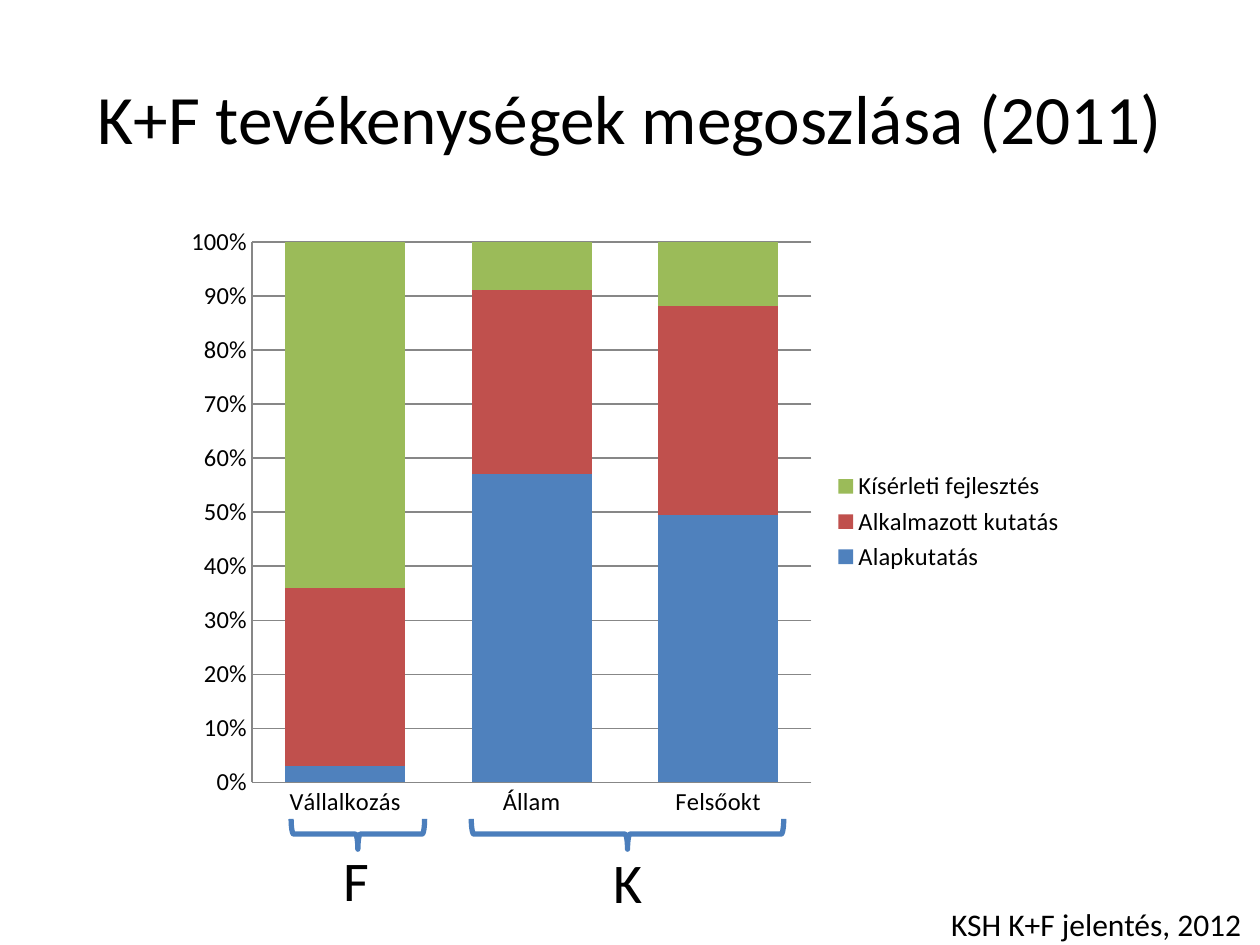
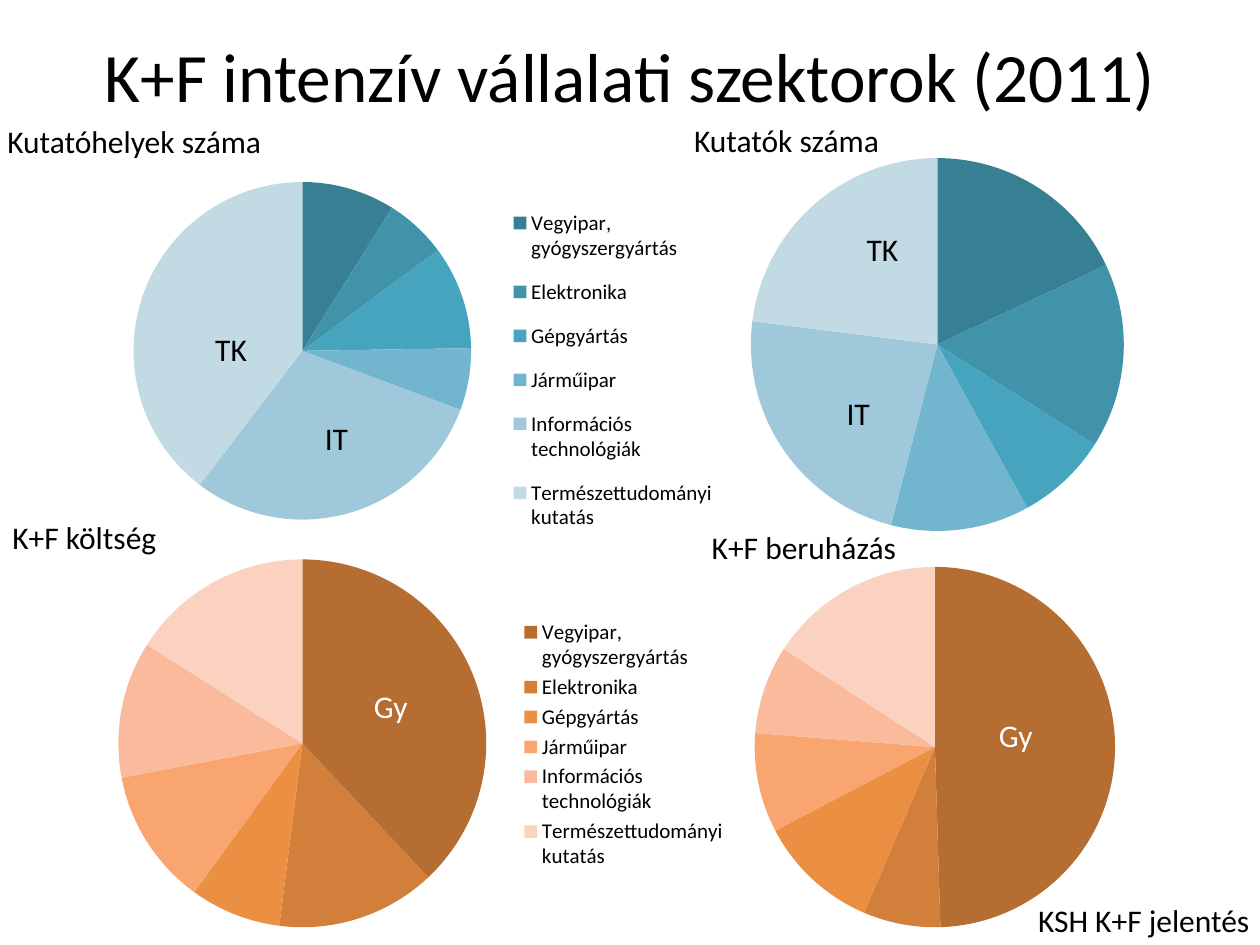
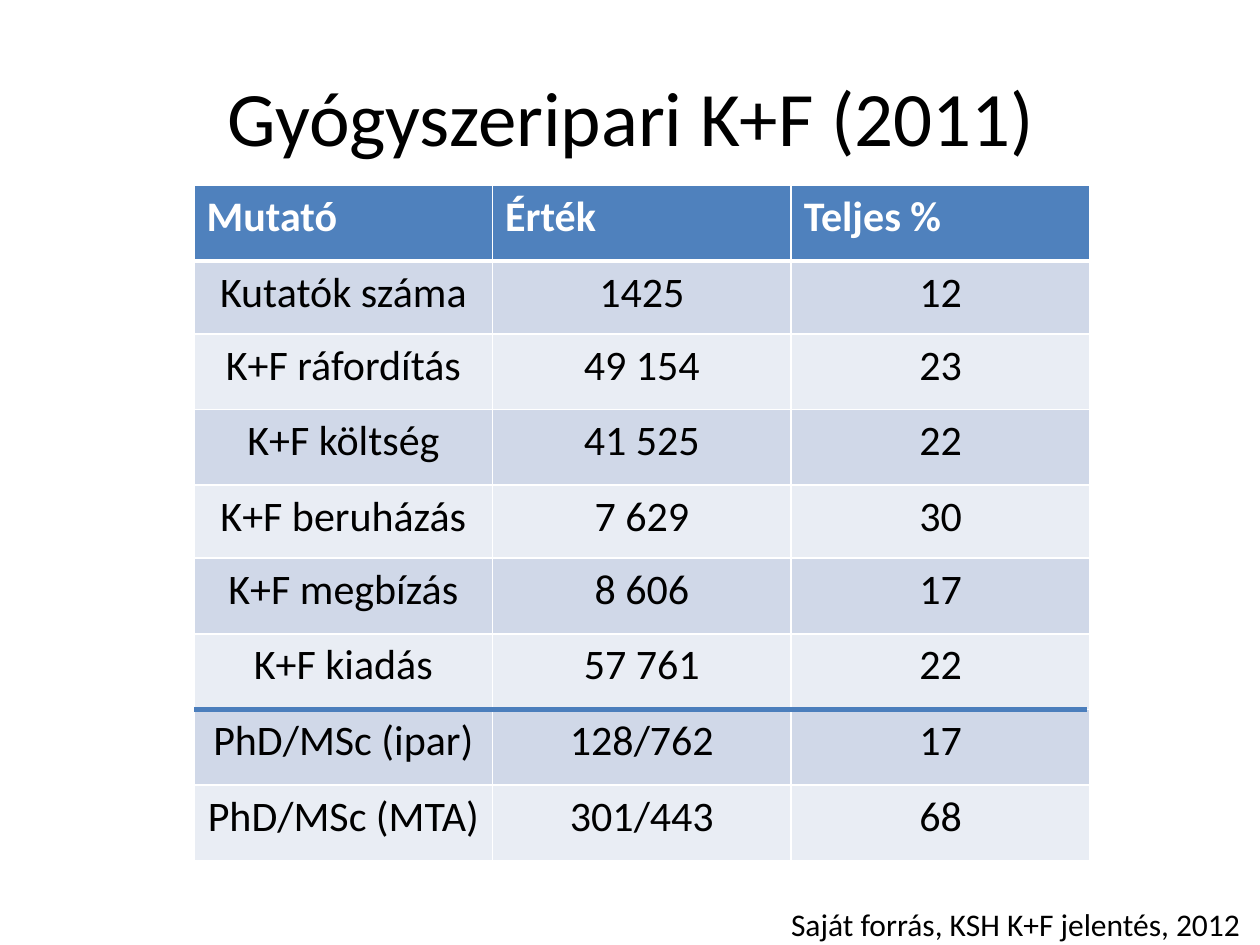
from lxml import etree
from pptx import Presentation
from pptx.chart.data import CategoryChartData
from pptx.dml.color import RGBColor
from pptx.enum.chart import XL_CHART_TYPE, XL_LEGEND_POSITION, XL_TICK_MARK
from pptx.enum.shapes import MSO_CONNECTOR, MSO_SHAPE
from pptx.enum.text import MSO_ANCHOR, MSO_AUTO_SIZE, PP_ALIGN
from pptx.oxml.ns import qn
from pptx.util import Inches, Pt

STACK = XL_CHART_TYPE.COLUMN_STACKED_100
PIE = XL_CHART_TYPE.PIE
RIGHT = XL_LEGEND_POSITION.RIGHT
NO_TICK = XL_TICK_MARK.NONE
BRACE = MSO_SHAPE.RIGHT_BRACE
STRAIGHT = MSO_CONNECTOR.STRAIGHT
MIDDLE = MSO_ANCHOR.MIDDLE
FIT = MSO_AUTO_SIZE.SHAPE_TO_FIT_TEXT
FIXED = MSO_AUTO_SIZE.NONE
CENTER, LEFT = PP_ALIGN.CENTER, PP_ALIGN.LEFT

FONT = "Calibri"
BLACK = RGBColor(0x00, 0x00, 0x00)
WHITE = RGBColor(0xFF, 0xFF, 0xFF)
BLUE = RGBColor(0x4F, 0x81, 0xBD)
RED = RGBColor(0xC0, 0x50, 0x4D)
GREEN = RGBColor(0x9B, 0xBB, 0x59)
RULE = RGBColor(0x4B, 0x7E, 0xBC)
GRAY = RGBColor(0x87, 0x87, 0x87)
BANDS = (RGBColor(0xD0, 0xD8, 0xE8), RGBColor(0xE9, 0xED, 0xF4))
TEALS = [RGBColor.from_string(c) for c in
         ("378093", "4193AA", "46A4BE", "72B5CE", "9FC8DA", "C2DAE4")]
RUSTS = [RGBColor.from_string(c) for c in
         ("B66D31", "D17F3A", "EB9043", "F8A570", "F9BB9C", "FBD2C0")]

SECTORS = ("Vegyipar, gyógyszergyártás", "Elektronika", "Gépgyártás",
           "Járműipar", "Információs technológiák",
           "Természettudományi kutatás")
SOURCE_TOP = 7.13

SHARES = (("Alapkutatás", (3, 57, 50), BLUE),
          ("Alkalmazott kutatás", (33, 34, 39), RED),
          ("Kísérleti fejlesztés", (64, 9, 12), GREEN))

PIES = (
    dict(box=(0.83, 1.12, 4.88, 3.33), mid=1.57, rad=1.34, shades=TEALS,
         vals=(9, 6, 10, 6, 30, 40), key=(3.19, 0.4, 1.69, 2.84),
         notes=(("Kutatóhelyek száma", -0.87, -0.2, 2.24, BLACK),
                ("TK", 0.78, 1.45, 0.46, BLACK),
                ("IT", 1.65, 2.16, 0.39, BLACK))),
    dict(box=(4.88, 1.12, 5.12, 3.23), mid=2.56, rad=1.48, shades=TEALS,
         vals=(18, 16, 8, 12, 23, 23), key=None,
         notes=(("Kutatók száma", 0.53, -0.21, 1.68, BLACK),
                ("IT", 1.74, 1.96, 0.39, BLACK),
                ("TK", 1.9, 0.66, 0.46, BLACK))),
    dict(box=(0.75, 4.3, 5.09, 3.2), mid=1.65, rad=1.46, shades=RUSTS,
         vals=(38, 14, 8, 12, 12, 16), key=(3.34, 0.58, 1.72, 2.06),
         notes=(("K+F költség", -0.75, -0.24, 1.36, BLACK),
                ("Gy", 2.12, 1.1, 0.47, WHITE))),
    dict(box=(4.84, 4.36, 5.16, 3.14), mid=2.58, rad=1.43, shades=RUSTS,
         vals=(50, 7, 11, 9, 8, 16), key=None,
         notes=(("K+F beruházás", 0.71, -0.22, 1.68, BLACK),
                ("Gy", 2.99, 1.27, 0.47, WHITE))),
)

ROWS = (("Mutató", "Érték", "Teljes %"),
        ("Kutatók száma", "1425", "12"),
        ("K+F ráfordítás", "49 154", "23"),
        ("K+F költség", "41 525", "22"),
        ("K+F beruházás", "7 629", "30"),
        ("K+F megbízás", "8 606", "17"),
        ("K+F kiadás", "57 761", "22"),
        ("PhD/MSc (ipar)", "128/762", "17"),
        ("PhD/MSc (MTA)", "301/443", "68"))
HEIGHTS = (0.6, 0.58, 0.6, 0.6, 0.58, 0.6, 0.6, 0.6, 0.6)


def inches(box):
    """Turn a box of numbers into lengths."""
    return [Inches(n) for n in box]


def style(font, size, color=BLACK, bold=False):
    """Set the shared typeface with a size, colour and weight."""
    font.name, font.size, font.bold = FONT, Pt(size), bold
    font.color.rgb = color


def start(deck, text, box, size):
    """Add a title-only slide and place its title."""
    slide = deck.slides.add_slide(deck.slide_layouts[5])
    title = slide.shapes.title
    title.left, title.top, title.width, title.height = inches(box)
    frame = title.text_frame
    frame.text = text
    frame.auto_size, frame.vertical_anchor = FIXED, MIDDLE
    par = frame.paragraphs[0]
    par.alignment = CENTER
    style(par.runs[0].font, size)
    return slide


def note(slide, text, box, size=18, color=BLACK, wrap=False):
    """Add a one-line text box."""
    frame = slide.shapes.add_textbox(*inches(box)).text_frame
    frame.text = text
    frame.word_wrap, frame.auto_size = wrap, FIT
    style(frame.paragraphs[0].runs[0].font, size, color)


def arrange(node, index, box, area):
    """Fix a chart part at an area measured in inches within the chart box."""
    for old in node.findall(qn("c:layout")):
        node.remove(old)
    layout = etree.Element(qn("c:layout"))
    manual = etree.SubElement(layout, qn("c:manualLayout"))
    pairs = [("xMode", "edge"), ("yMode", "edge")]
    if node.tag == qn("c:plotArea"):
        pairs.insert(0, ("layoutTarget", "inner"))
    for name, part, whole in zip("xywh", area, box[2:] * 2):
        pairs.append((name, f"{part / whole:.4f}"))
    for name, val in pairs:
        etree.SubElement(manual, qn("c:" + name)).set("val", val)
    node.insert(index, layout)


def add_chart(slide, kind, box, data, size, plot, legend):
    """Add a chart with the shared font, a fixed plot and a right legend."""
    chart = slide.shapes.add_chart(kind, *inches(box), data).chart
    chart.has_title = False
    style(chart.font, size)
    chart.has_legend = legend
    if legend:
        chart.legend.position = RIGHT
        chart.legend.include_in_layout = False
    area = chart._chartSpace.find(".//" + qn("c:plotArea"))
    arrange(area, 0, box, plot)
    return chart


def columns(slide, box):
    """Draw the stacked shares of research activities."""
    data = CategoryChartData()
    data.categories = ("Vállalkozás", "Állam", "Felsőokt")
    for name, vals, _ in SHARES:
        data.add_series(name, vals)
    chart = add_chart(slide, STACK, box, data, 14,
                      (0.62, 0.22, 4.44, 4.29), True)
    plot = chart.plots[0]
    plot.gap_width, plot.overlap = 55, 100
    plot.vary_by_categories = False
    for series, (_, _, color) in zip(plot.series, SHARES):
        series.format.fill.solid()
        series.format.fill.fore_color.rgb = color
    for axis in (chart.category_axis, chart.value_axis):
        axis.major_tick_mark = axis.minor_tick_mark = NO_TICK
        axis.format.line.color.rgb = GRAY
    axis = chart.value_axis
    axis.has_major_gridlines = True
    axis.major_gridlines.format.line.color.rgb = GRAY
    axis.major_unit = 0.1
    axis.tick_labels.number_format = "0%"
    axis.tick_labels.number_format_is_linked = False


def brace(slide, box, word, drop):
    """Draw a brace opening upwards with its word centred below."""
    left, top, width, height = box
    mid = left + width / 2
    shape = slide.shapes.add_shape(BRACE, *inches(
        (mid - height / 2, top + height / 2 - width / 2, height, width)))
    shape.rotation = 90
    shape.shadow.inherit = False
    shape.fill.background()
    shape.line.color.rgb, shape.line.width = RULE, Pt(3)
    note(slide, word, (mid - 0.21, top + drop, 0.42, 0.64), 32)


def pie(slide, box, mid, rad, shades, vals, key, notes):
    """Draw a pie of the sectors with its caption and marks."""
    data = CategoryChartData()
    data.categories = SECTORS if key else ("1", "2", "3", "4", "5", "6")
    data.add_series("Series 1", vals)
    plot = (mid - rad, box[3] / 2 - rad, 2 * rad, 2 * rad)
    chart = add_chart(slide, PIE, box, data, 12, plot, bool(key))
    if key:
        arrange(chart.legend._element, 1, box, key)
    chart.plots[0].vary_by_categories = True
    for index, shade in enumerate(shades):
        fill = chart.plots[0].series[0].points[index].format.fill
        fill.solid()
        fill.fore_color.rgb = shade


def marks(slide, box, notes):
    """Write the caption and marks of a pie relative to its box."""
    for text, x, y, width, color in notes:
        note(slide, text, (box[0] + x, box[1] + y, width, 0.4), color=color)


def edge(cell, index, side, width):
    """Give one side of a cell a white border."""
    line = etree.Element(qn("a:ln" + side), w=str(Pt(width)))
    fill = etree.SubElement(line, qn("a:solidFill"))
    etree.SubElement(fill, qn("a:srgbClr"), val=str(WHITE))
    cell._tc.get_or_add_tcPr().insert(index, line)


def grid(slide, box):
    """Build the table of indicators and the rule before its last rows."""
    left, top, width, _ = box
    table = slide.shapes.add_table(len(ROWS), 3, *inches(box)).table
    table.horz_banding = False
    for col in table.columns:
        col.width = Inches(width / 3)
    for r, row in enumerate(ROWS):
        table.rows[r].height = Inches(HEIGHTS[r])
        head = r == 0
        for c, text in enumerate(row):
            cell = table.cell(r, c)
            cell.text = text
            par = cell.text_frame.paragraphs[0]
            par.alignment = LEFT if head else CENTER
            style(par.runs[0].font, 24, WHITE if head else BLACK, head)
            cell.fill.solid()
            cell.fill.fore_color.rgb = BLUE if head else BANDS[(r - 1) % 2]
            thick = {"T": 3 if r == 1 else 1, "B": 3 if head else 1}
            for index, side in enumerate("LRTB"):
                edge(cell, index, side, thick.get(side, 1))
    y = top + sum(HEIGHTS[:7])
    line = slide.shapes.add_connector(
        STRAIGHT, *inches((left, y, left + width - 0.02, y)))
    line.line.color.rgb, line.line.width = RULE, Pt(3)
    etree.SubElement(line._element.spPr, qn("a:effectLst"))


def shares(deck):
    """Build the slide on the split of activities."""
    slide = start(deck, "K+F tevékenységek megoszlása (2011)",
                  (0.5, 0.3, 9, 1.25), 39.6)
    columns(slide, (1.38, 1.7, 7.17, 4.88))
    note(slide, "KSH K+F jelentés, 2012", (7.45, SOURCE_TOP, 2.59, 0.4))
    brace(slide, (3.74, 6.5, 2.48, 0.24), "K", 0.18)
    brace(slide, (2.31, 6.5, 1.06, 0.24), "F", 0.16)


def sectors(deck):
    """Build the slide with four pies."""
    slide = start(deck, "K+F intenzív vállalati szektorok (2011)",
                  (0.5, -0.03, 9, 1.25), 39.6)
    for item in PIES:
        pie(slide, **item)
    for item in PIES:
        marks(slide, item["box"], item["notes"])
    note(slide, "KSH K+F jelentés", (8.14, 7.1, 1.9, 0.4))


def pharma(deck):
    """Build the slide with the table."""
    slide = start(deck, "Gyógyszeripari K+F (2011)",
                  (0.51, 0.29, 9, 1.25), 44)
    grid(slide, (1.54, 1.47, 7.11, sum(HEIGHTS)))
    note(slide, "Saját forrás, KSH K+F jelentés, 2012",
         (6.18, SOURCE_TOP, 3.86, 0.4), wrap=True)


def main():
    """Build and save the deck."""
    deck = Presentation()
    deck.slide_width, deck.slide_height = Inches(10), Inches(7.5)
    shares(deck)
    sectors(deck)
    pharma(deck)
    deck.save("out.pptx")


if __name__ == "__main__":
    main()
